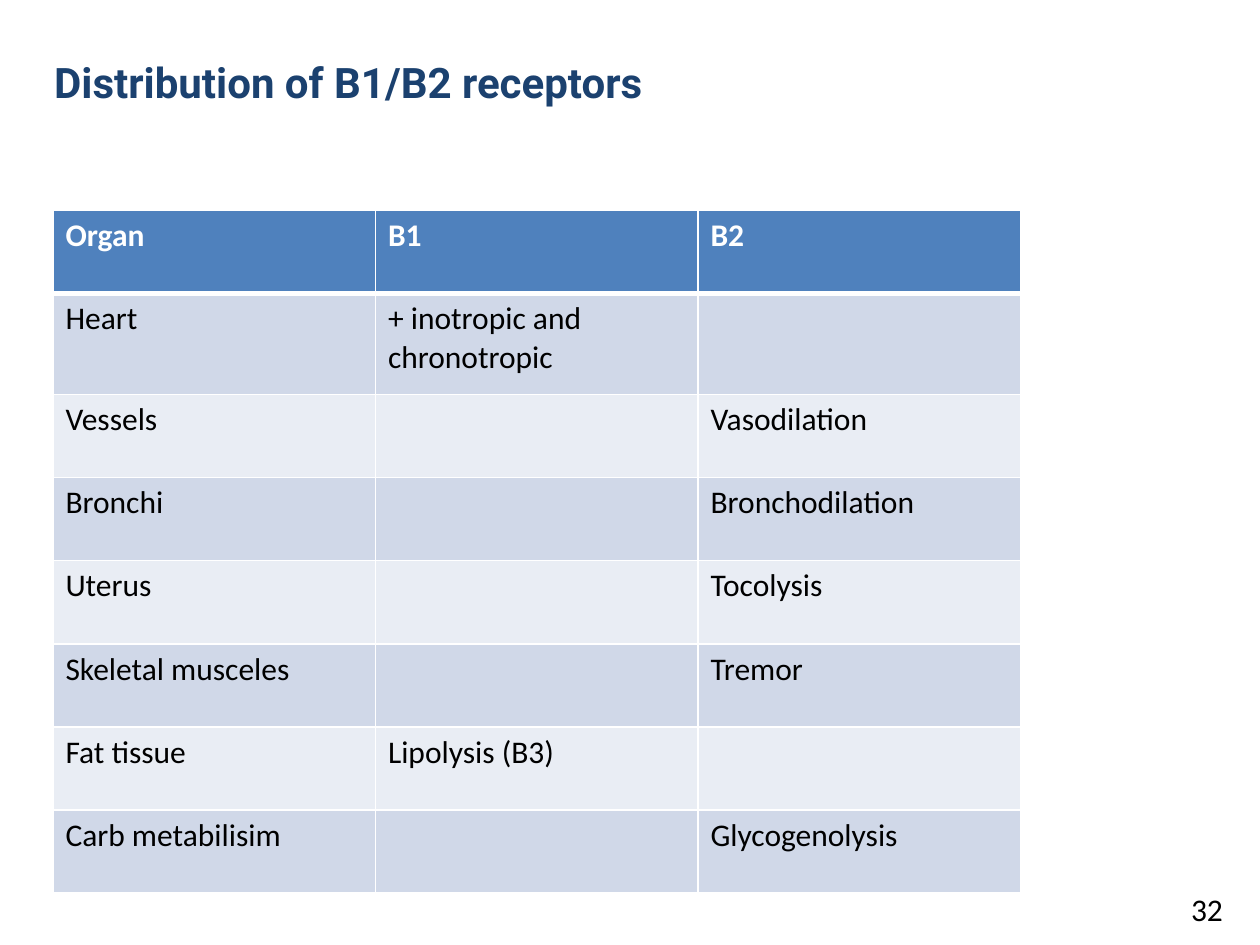
"""Build a slide with a table of B1/B2 receptor distribution."""
import pptx
import pptx.dml.color
import pptx.enum.text
import pptx.oxml
import pptx.oxml.ns
import pptx.util

Inches = pptx.util.Inches
Pt = pptx.util.Pt
ANCHOR = pptx.enum.text.MSO_ANCHOR
ALIGN = pptx.enum.text.PP_ALIGN

COLORS = {
    "title": "1B416F",
    "header": "4F81BD",
    "odd_row": "D0D8E8",
    "even_row": "E9EDF4",
    "white": "FFFFFF",
    "black": "000000",
}
TITLE_FONT = {"name": "Roboto", "size": Pt(24), "bold": True}
HEADER_FONT = {"name": "Calibri", "size": Pt(18), "bold": True}
BODY_FONT = {"name": "Calibri", "size": Pt(18), "bold": False}

RECEPTOR_ROWS = [
    ("Organ", "B1", "B2"),
    ("Heart", "+ inotropic and chronotropic", ""),
    ("Vessels", "", "Vasodilation"),
    ("Bronchi", "", "Bronchodilation"),
    ("Uterus", "", "Tocolysis"),
    ("Skeletal musceles", "", "Tremor"),
    ("Fat tissue", "Lipolysis (B3)", ""),
    ("Carb metabilisim", "", "Glycogenolysis"),
]
ROW_HEIGHT = 0.66
HEART_ROW_HEIGHT = 0.8
COLUMN_WIDTH = 2.56


def rgb(color):
    """Return the named colour as an RGBColor."""
    return pptx.dml.color.RGBColor.from_string(COLORS[color])


def write_text(text_frame, text, font_values, color, alignment=ALIGN.LEFT):
    """Write one formatted paragraph into a text frame."""
    paragraph = text_frame.paragraphs[0]
    paragraph.alignment = alignment
    if not text:
        paragraph.font.size = font_values["size"]
        return
    run = paragraph.add_run()
    run.text = text
    for attribute, value in font_values.items():
        setattr(run.font, attribute, value)
    run.font.color.rgb = rgb(color)


def add_title(slide, text):
    """Place and format the title placeholder."""
    title = slide.shapes.title
    position = {"left": 0.33, "top": 0.02, "width": 7.92, "height": 1.25}
    for attribute, value in position.items():
        setattr(title, attribute, Inches(value))
    title.text_frame.vertical_anchor = ANCHOR.MIDDLE
    write_text(title.text_frame, text, TITLE_FONT, "title")


def add_slide_number(slide, text):
    """Add the slide number at the lower right."""
    box = slide.shapes.add_textbox(Inches(9.33), Inches(7), Inches(0.5), Inches(0.42))
    box.text_frame.word_wrap = True
    box.text_frame.vertical_anchor = ANCHOR.MIDDLE
    write_text(box.text_frame, text, BODY_FONT, "black", ALIGN.CENTER)


def set_borders(cell, widths):
    """Draw white cell borders with the given widths in points by side."""
    properties = cell._tc.get_or_add_tcPr()
    for side, width in widths.items():
        properties.append(pptx.oxml.parse_xml(
            f'<a:ln{side} {pptx.oxml.ns.nsdecls("a")} w="{Pt(width)}"><a:solidFill>'
            f'<a:srgbClr val="{COLORS["white"]}"/></a:solidFill></a:ln{side}>'))


def format_cell(cell, text, row_index):
    """Fill, border and write a cell according to its row."""
    is_header = row_index == 0
    set_borders(cell, {"L": 1, "R": 1, "T": 3 if row_index == 1 else 1,
                       "B": 3 if is_header else 1})
    row_color = "odd_row" if row_index % 2 else "even_row"
    cell.fill.solid()
    cell.fill.fore_color.rgb = rgb("header" if is_header else row_color)
    write_text(cell.text_frame, text, HEADER_FONT if is_header else BODY_FONT,
               "white" if is_header else "black")


def add_receptor_table(slide, rows):
    """Add the table of organs and receptor effects."""
    column_count = len(rows[0])
    height = ROW_HEIGHT * (len(rows) - 1) + HEART_ROW_HEIGHT
    table = slide.shapes.add_table(
        len(rows), column_count, Inches(0.42), Inches(1.67),
        Inches(COLUMN_WIDTH * column_count), Inches(height)).table
    for column in table.columns:
        column.width = Inches(COLUMN_WIDTH)
    for row_index, texts in enumerate(rows):
        is_heart = texts[0] == "Heart"
        table.rows[row_index].height = Inches(HEART_ROW_HEIGHT if is_heart else ROW_HEIGHT)
        for column_index, text in enumerate(texts):
            format_cell(table.cell(row_index, column_index), text, row_index)


def main():
    """Build and save the presentation."""
    presentation = pptx.Presentation()
    presentation.slide_width = Inches(10)
    presentation.slide_height = Inches(7.5)
    slide = presentation.slides.add_slide(presentation.slide_layouts[5])
    add_slide_number(slide, "32")
    add_receptor_table(slide, RECEPTOR_ROWS)
    add_title(slide, "Distribution of B1/B2 receptors")
    presentation.save("out.pptx")


if __name__ == "__main__":
    main()
